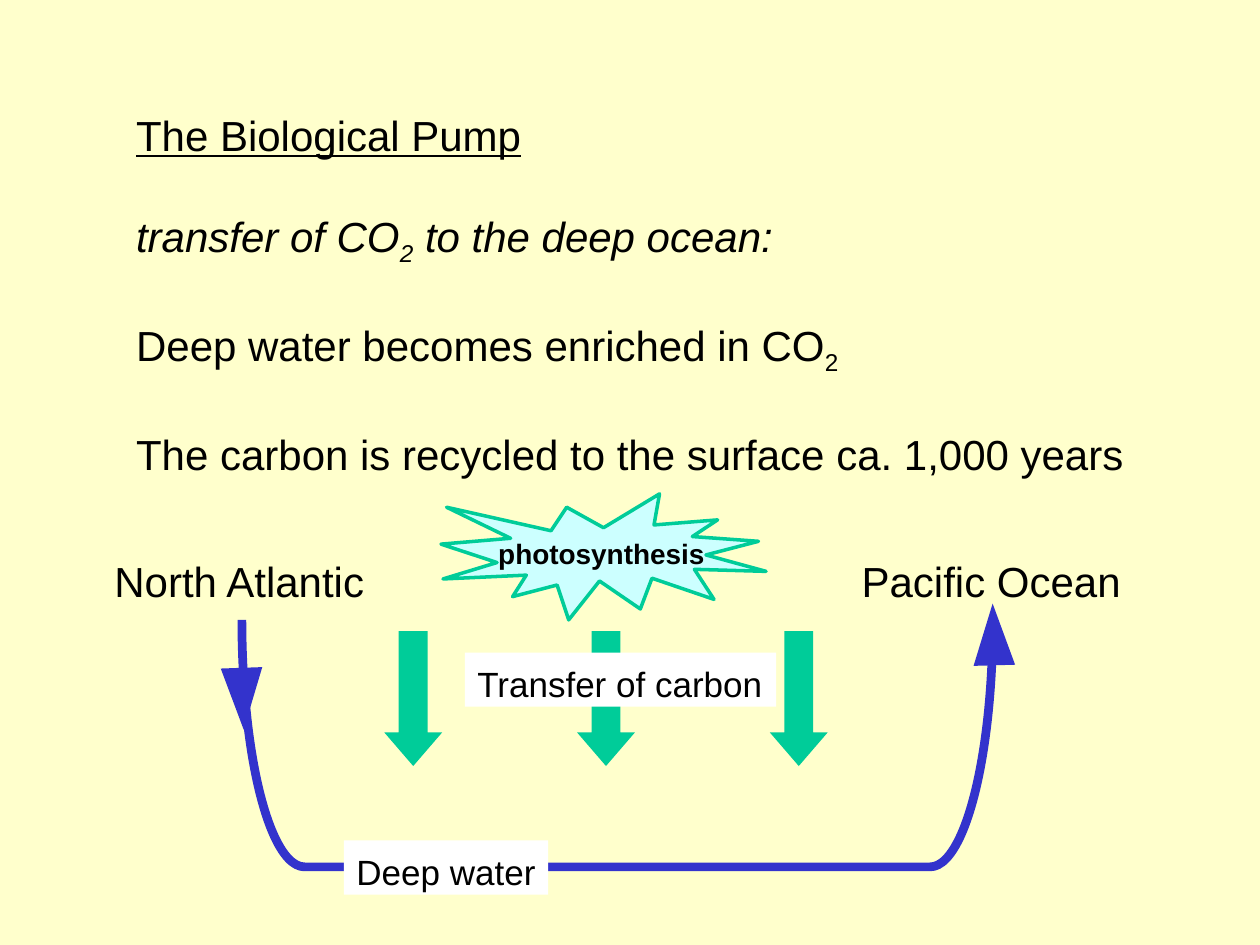
import pptx
import pptx.dml.color
import pptx.enum.shapes
import pptx.enum.text
import pptx.util
import lxml.etree

CREAM = pptx.dml.color.RGBColor(0xFF, 0xFF, 0xCC)
BLACK = pptx.dml.color.RGBColor(0x00, 0x00, 0x00)
WHITE = pptx.dml.color.RGBColor(0xFF, 0xFF, 0xFF)
BLUE = pptx.dml.color.RGBColor(0x33, 0x33, 0xCC)
GREEN = pptx.dml.color.RGBColor(0x00, 0xCC, 0x99)
PALE_CYAN = pptx.dml.color.RGBColor(0xCC, 0xFF, 0xFF)

SLIDE_WIDTH, SLIDE_HEIGHT = 10, 7.5
TEXT_LEFT, TEXT_WIDTH = 0.98, 8.18
ARROW_LEFT, ARROW_PITCH, ARROW_COUNT = 3.05, 1.53, 3

Preset = pptx.enum.shapes.MSO_SHAPE
Anchor = pptx.enum.text.MSO_ANCHOR
Align = pptx.enum.text.PP_ALIGN


def place(shape, left, top, width, height):
    """Move and size a shape, in inches."""
    shape.left, shape.top, shape.width, shape.height = map(
        pptx.util.Inches, (left, top, width, height))


def write_text(paragraph, text, size=24, bold=False, italic=False,
               underline=False, align=Align.LEFT, space_before=0):
    """Fill a paragraph; pieces between underscores become subscripts."""
    paragraph.alignment = align
    paragraph.line_spacing = 1.0
    paragraph.space_before = pptx.util.Pt(space_before)
    for index, piece in enumerate(text.split("_")):
        if not piece:
            continue
        run = paragraph.add_run()
        run.text = piece
        font = run.font
        font.name, font.size = "Arial", pptx.util.Pt(size)
        font.bold, font.italic, font.underline = bold, italic, underline
        font.color.rgb = BLACK
        if index % 2:
            run._r.get_or_add_rPr().set("baseline", "-25000")


def set_frame(frame, wrap=True, anchor=Anchor.TOP, top_inset=0.08):
    """Set the layout of a text frame."""
    frame.word_wrap = wrap
    frame.auto_size = pptx.enum.text.MSO_AUTO_SIZE.NONE
    frame.vertical_anchor = anchor
    frame.margin_left = frame.margin_right = pptx.util.Inches(0.1)
    frame.margin_top = pptx.util.Inches(top_inset)
    frame.margin_bottom = 0


def add_preset(slide, preset, box, fill=None, line=None, line_width=1,
               rotation=0, adjustments=()):
    """Add a flat preset shape."""
    shape = slide.shapes.add_shape(preset, *map(pptx.util.Inches, box))
    shape.shadow.inherit = False
    shape.rotation = rotation
    for index, value in enumerate(adjustments):
        shape.adjustments[index] = value
    if fill is None:
        shape.fill.background()
    else:
        shape.fill.solid()
        shape.fill.fore_color.rgb = fill
    if line is None:
        shape.line.fill.background()
    else:
        shape.line.color.rgb = line
        shape.line.width = pptx.util.Pt(line_width)
    return shape


def add_label(slide, text, box, size=24, fill=None):
    """Add a one-line label, on a filled box if a fill is given."""
    if fill is None:
        shape = slide.shapes.add_textbox(*map(pptx.util.Inches, box))
    else:
        shape = add_preset(slide, Preset.RECTANGLE, box, fill=fill)
    set_frame(shape.text_frame, wrap=False)
    write_text(shape.text_frame.paragraphs[0], text, size=size)


def add_heading(slide, text):
    """Write the title placeholder."""
    title = slide.shapes.title
    place(title, TEXT_LEFT, 0.79, TEXT_WIDTH, 0.5)
    set_frame(title.text_frame)
    write_text(title.text_frame.paragraphs[0], text, underline=True)


def add_statements(slide, statements):
    """Write the body placeholder as unbulleted lines, the first in italics."""
    body = slide.placeholders[1]
    place(body, TEXT_LEFT, 1.59, TEXT_WIDTH, 2.2)
    frame = body.text_frame
    set_frame(frame)
    for index, statement in enumerate(statements):
        paragraph = frame.add_paragraph() if index else frame.paragraphs[0]
        write_text(paragraph, statement, italic=index == 0,
                   space_before=29.5 if index else 0)
        properties = paragraph._p.get_or_add_pPr()
        properties.set("marL", "0")
        properties.set("indent", "0")
        lxml.etree.SubElement(properties, pptx.oxml.ns.qn("a:buNone"))


def add_circulation(slide):
    """Draw the deep water path with its sinking and rising heads."""
    add_preset(slide, Preset.LEFT_BRACKET, (3.92, 2.92, 1.96, 5.96),
               line=BLUE, line_width=5, rotation=270, adjustments=[0.254])
    add_label(slide, "North Atlantic", (0.81, 4.33, 2.2, 0.5))
    add_label(slide, "Pacific Ocean", (6.74, 4.33, 2.26, 0.5))
    for left, top, rotation in ((7.72, 4.79, 358.4), (1.76, 5.3, 178)):
        add_preset(slide, Preset.ISOSCELES_TRIANGLE, (left, top, 0.33, 0.49),
                   fill=BLUE, rotation=rotation)
    add_label(slide, "Deep water", (2.73, 6.67, 1.62, 0.43), 20, WHITE)


def add_carbon_transfer(slide):
    """Draw the downward arrows, their label and the photosynthesis burst."""
    for column in range(ARROW_COUNT):
        box = (ARROW_LEFT + column * ARROW_PITCH, 5.01, 0.46, 1.07)
        add_preset(slide, Preset.DOWN_ARROW, box, fill=GREEN,
                   adjustments=[0.5, 0.58])
    add_label(slide, "Transfer of carbon", (3.69, 5.18, 2.47, 0.43), 20, WHITE)
    burst = add_preset(slide, Preset.EXPLOSION1, (3.5, 3.92, 2.58, 1),
                       fill=PALE_CYAN, line=GREEN, line_width=2)
    set_frame(burst.text_frame, wrap=False, anchor=Anchor.MIDDLE, top_inset=0)
    write_text(burst.text_frame.paragraphs[0], "photosynthesis", size=16,
               bold=True, align=Align.CENTER)


def main():
    """Build and save the slide."""
    presentation = pptx.Presentation()
    presentation.slide_width = pptx.util.Inches(SLIDE_WIDTH)
    presentation.slide_height = pptx.util.Inches(SLIDE_HEIGHT)
    slide = presentation.slides.add_slide(presentation.slide_layouts[1])
    slide.background.fill.solid()
    slide.background.fill.fore_color.rgb = CREAM
    add_heading(slide, "The Biological Pump")
    add_statements(slide, [
        "transfer of CO_2_ to the deep ocean:",
        "Deep water becomes enriched in CO_2_",
        "The carbon is recycled to the surface ca. 1,000 years",
    ])
    add_circulation(slide)
    add_carbon_transfer(slide)
    presentation.save("out.pptx")


if __name__ == "__main__":
    main()
